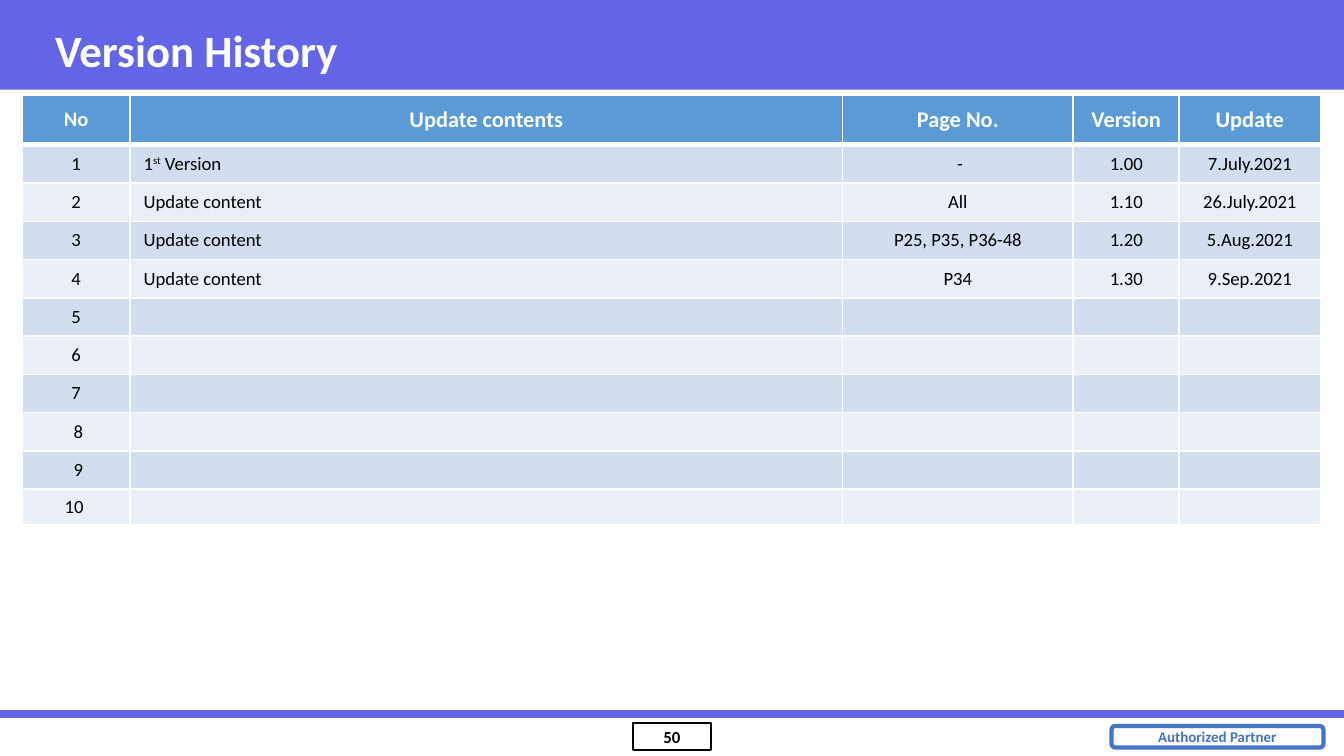
from lxml import etree
from pptx import Presentation
from pptx.dml.color import RGBColor
from pptx.enum import shapes, text
from pptx.oxml.ns import qn
from pptx.util import Pt

VIOLET = RGBColor(0x64, 0x64, 0xE6)
BLUE = RGBColor(0x44, 0x72, 0xC4)
HEADER = RGBColor(0x5B, 0x9B, 0xD5)
BAND_DARK = RGBColor(0xD2, 0xDE, 0xEF)
BAND_LIGHT = RGBColor(0xEA, 0xEF, 0xF7)
WHITE = RGBColor(0xFF, 0xFF, 0xFF)
BLACK = RGBColor(0, 0, 0)
CENTER, LEFT = text.PP_ALIGN.CENTER, text.PP_ALIGN.LEFT


def write(paragraph, parts, size, color, bold, align):
    """Fill a paragraph with runs; every second part is superscript."""
    paragraph.alignment = align
    for index, part in enumerate(parts):
        run = paragraph.add_run()
        run.text = part
        values = {"name": "Calibri", "size": Pt(size), "bold": bold}
        for name, value in values.items():
            setattr(run.font, name, value)
        run.font.color.rgb = color
        if index % 2:
            run.font._element.set("baseline", "30000")


def add_borders(cell, bottom_width):
    """Draw white lines on the four sides of a cell."""
    properties = cell._tc.get_or_add_tcPr()
    sides = {"lnL": 1, "lnR": 1, "lnT": 1, "lnB": bottom_width}
    for index, (side, width) in enumerate(sides.items()):
        line = etree.Element(qn("a:" + side), w=str(Pt(width)))
        fill = etree.SubElement(line, qn("a:solidFill"))
        etree.SubElement(fill, qn("a:srgbClr"), val=str(WHITE))
        properties.insert(index, line)


presentation = Presentation()
presentation.slide_width, presentation.slide_height = Pt(720), Pt(405)
slide = presentation.slides.add_slide(presentation.slide_layouts[5])

# Title band
band = slide.shapes.add_shape(
    shapes.MSO_SHAPE.RECTANGLE, Pt(0), Pt(0), Pt(720), Pt(48))
band.shadow.inherit = False
band.fill.solid()
band.fill.fore_color.rgb = VIOLET
band.line.fill.background()

# Footer line
rule = slide.shapes.add_connector(
    shapes.MSO_CONNECTOR.STRAIGHT, Pt(0), Pt(382.5), Pt(720), Pt(382.5))
rule.line.color.rgb = VIOLET
rule.line.width = Pt(4.5)
etree.SubElement(rule._element.spPr, qn("a:effectLst"))

# Footer boxes: page number and partner label
footer_boxes = [
    ("50", shapes.MSO_SHAPE.RECTANGLE, (339, 387.2, 42, 14.8), BLACK, 1, 9),
    ("Authorized Partner", shapes.MSO_SHAPE.ROUNDED_RECTANGLE,
     (595.5, 389, 113.5, 11.5), BLUE, 2.25, 8),
]
for label, kind, box, color, line_width, size in footer_boxes:
    shape = slide.shapes.add_shape(kind, *map(Pt, box))
    shape.shadow.inherit = False
    shape.fill.background()
    shape.line.color.rgb = color
    shape.line.width = Pt(line_width)
    frame = shape.text_frame
    frame_format = {
        "word_wrap": False, "vertical_anchor": text.MSO_ANCHOR.MIDDLE,
        "margin_left": Pt(2), "margin_right": Pt(2),
        "margin_top": Pt(2), "margin_bottom": Pt(2)}
    for name, value in frame_format.items():
        setattr(frame, name, value)
    write(frame.paragraphs[0], [label], size, color, True, CENTER)

# Title, brought in front of the band
title = slide.shapes.title
title_format = {"left": Pt(22.3), "top": Pt(5.8),
                "width": Pt(666.7), "height": Pt(41.8)}
for name, value in title_format.items():
    setattr(title, name, value)
title.text_frame.vertical_anchor = text.MSO_ANCHOR.MIDDLE
write(title.text_frame.paragraphs[0], ["Version History"],
      24, WHITE, True, LEFT)
slide.shapes._spTree.append(title._element)

# Version table: each cell is a list of text parts
rows = [
    ["No", "Update contents", "Page No.", "Version", "Update"],
    ["1", ("1", "st", " Version"), " -", "1.00", "7.July.2021"],
    ["2", "Update content", "All", "1.10", "26.July.2021"],
    ["3", "Update content", "P25, P35, P36-48", "1.20", "5.Aug.2021"],
    ["4", "Update content", "P34", "1.30", "9.Sep.2021"],
]
rows += [[number, "", "", "", ""]
         for number in ("5", "6", "7", " 8", " 9", "10 ")]
column_widths = [58, 381.5, 123.7, 56.8, 75.6]
row_heights = [26.8] + [20.5] * 9 + [18.8]

table = slide.shapes.add_table(
    len(rows), len(column_widths), Pt(11.8), Pt(50.8),
    Pt(sum(column_widths)), Pt(sum(row_heights))).table
for column, width in zip(table.columns, column_widths):
    column.width = Pt(width)
for row, height in zip(table.rows, row_heights):
    row.height = Pt(height)

for row_index, row in enumerate(rows):
    is_header = row_index == 0
    for column_index, content in enumerate(row):
        cell = table.cell(row_index, column_index)
        cell.vertical_anchor = text.MSO_ANCHOR.MIDDLE
        cell.fill.solid()
        cell.fill.fore_color.rgb = (
            HEADER if is_header else BAND_DARK if row_index % 2 else BAND_LIGHT)
        add_borders(cell, 3 if is_header else 1)
        paragraph = cell.text_frame.paragraphs[0]
        if not content:
            # Keeps empty cells from stretching the row
            etree.SubElement(paragraph._p, qn("a:endParaRPr"), sz="1000")
            continue
        parts = [content] if isinstance(content, str) else content
        size = 10 if not is_header else 12 if column_index else 11
        align = LEFT if column_index == 1 and not is_header else CENTER
        write(paragraph, parts, size, WHITE if is_header else BLACK,
              is_header, align)

presentation.save("out.pptx")
